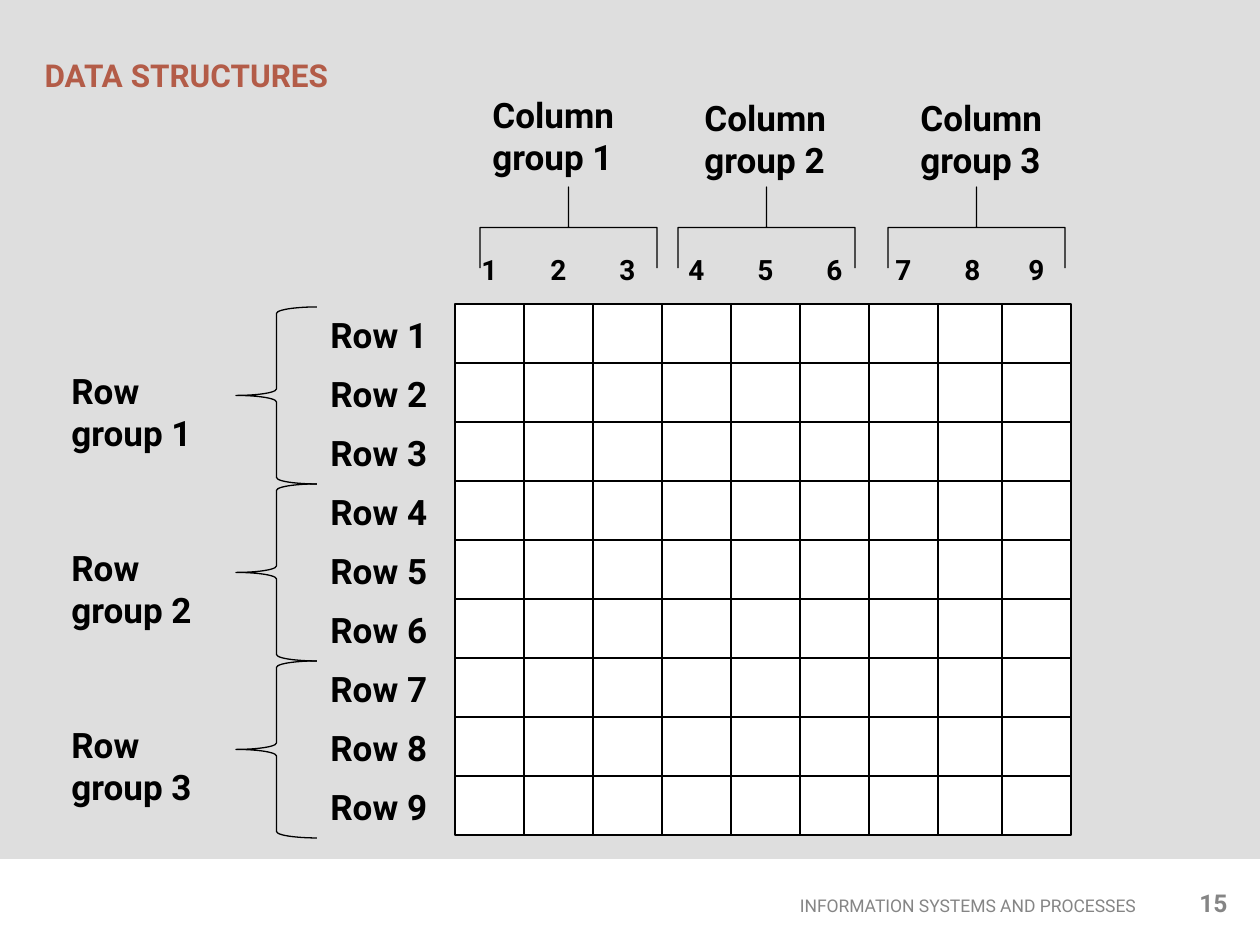
import pptx
import pptx.util
import pptx.dml.color
import pptx.enum.shapes
import pptx.enum.text

PX = pptx.util.Inches(1) / 126
COLORS = {
    "panel": "DEDEDE",
    "cell": "FFFFFF",
    "ink": "000000",
    "heading": "B35C48",
    "footer": "858585",
}
ALIGN = pptx.enum.text.PP_ALIGN
ANCHOR = pptx.enum.text.MSO_ANCHOR
SHAPE = pptx.enum.shapes.MSO_SHAPE

deck = pptx.Presentation()
deck.slide_width = pptx.util.Inches(10)
deck.slide_height = pptx.util.Inches(7.5)
slide = deck.slides.add_slide(deck.slide_layouts[5])


def put_text(text, box, size, color="ink", bold=True, align=ALIGN.LEFT,
             anchor=ANCHOR.TOP, holder=None):
    """Write text in holder, or in a new text box, placed at box in px."""
    holder = holder or slide.shapes.add_textbox(0, 0, 0, 0)
    for side, length in zip(("left", "top", "width", "height"), box):
        setattr(holder, side, round(length * PX))
    frame = holder.text_frame
    frame.text = text
    frame.word_wrap = True
    frame.auto_size = pptx.enum.text.MSO_AUTO_SIZE.NONE
    frame.vertical_anchor = anchor
    font_format = {"name": "Roboto", "size": pptx.util.Pt(size), "bold": bold}
    for paragraph in frame.paragraphs:
        paragraph.alignment = align
        for key, value in font_format.items():
            setattr(paragraph.font, key, value)
        paragraph.font.color.rgb = pptx.dml.color.RGBColor.from_string(COLORS[color])


def put_shape(preset, box, fill=None, line=None):
    shape = slide.shapes.add_shape(preset, *(round(length * PX) for length in box))
    shape.shadow.inherit = False
    for part, color in ((shape.fill, fill), (shape.line.fill, line)):
        if color:
            part.solid()
            part.fore_color.rgb = pptx.dml.color.RGBColor.from_string(COLORS[color])
        else:
            part.background()
    if line:
        shape.line.width = pptx.util.Pt(0.75)
    return shape


# Background panel, moved behind the title
panel = put_shape(SHAPE.RECTANGLE, (0, 0, 1260, 859), fill="panel")
slide.shapes._spTree.insert(2, panel._element)

put_text("DATA STRUCTURES", (32, 15, 816, 120), 18, "heading",
         anchor=ANCHOR.MIDDLE, holder=slide.shapes.title)
put_text("INFORMATION SYSTEMS AND PROCESSES", (388, 888, 760, 34), 10, "footer",
         bold=False, align=ALIGN.RIGHT, anchor=ANCHOR.MIDDLE)
put_text("15", (1168, 882, 72, 44), 14, "footer", align=ALIGN.RIGHT)

# Grid of cells with numbered columns and rows; the last column is set closer
CELL_W, CELL_H = 69, 59
GRID_LEFT, GRID_TOP = 455, 304
column_lefts = [GRID_LEFT + CELL_W * column for column in range(8)] + [1002]

for row in range(9):
    row_top = GRID_TOP + CELL_H * row
    for column_left in column_lefts:
        put_shape(SHAPE.RECTANGLE, (column_left, row_top, CELL_W, CELL_H), "cell", "ink")
    put_text(f"Row {row + 1}", (318, row_top + 3, 130, 55), 20)

for number, column_left in enumerate(column_lefts, 1):
    put_text(str(number), (column_left + 5, 246, 59, 47), 16, align=ALIGN.CENTER)

# Braces and names of the row groups, three rows each
BRACE_W, BRACE_H = 81, 177
for group in range(3):
    offset = 3 * CELL_H * group
    brace = put_shape(SHAPE.LEFT_BRACE, (236, 307 + offset, BRACE_W, BRACE_H), line="ink")
    brace.adjustments[0] = 0.08
    put_text(f"Row\ngroup {group + 1}", (59, 363 + offset, 155, 97), 20)

# Square braces and names of the column groups
column_groups = [(528, 480, 87), (726, 692, 90), (936, 908, 90)]
for group, (brace_left, name_left, name_top) in enumerate(column_groups, 1):
    brace = put_shape(SHAPE.LEFT_BRACE, (brace_left, 139, BRACE_W, BRACE_H), line="ink")
    brace.adjustments[0] = 0
    brace.rotation = 90
    put_text(f"Column\ngroup {group}", (name_left, name_top, 158, 97), 20)

deck.save("out.pptx")
